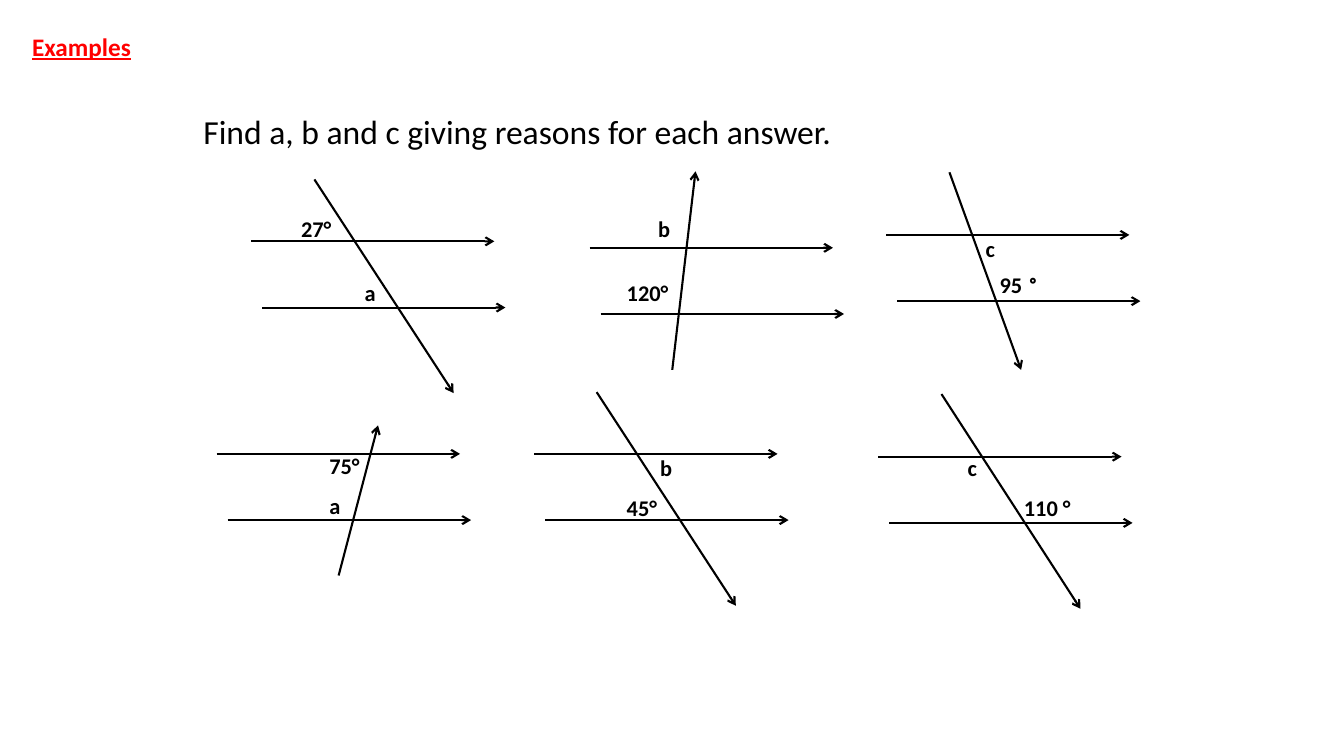
from lxml.etree import SubElement
from pptx import Presentation
from pptx.dml.color import RGBColor
from pptx.enum.shapes import MSO_CONNECTOR as Connector
from pptx.enum.text import MSO_AUTO_SIZE as AutoSize
from pptx.oxml.ns import qn
from pptx.util import Pt

COLORS = {"ink": "000000", "heading": "FF0000"}
PARALLEL_LENGTH = 173.8
PARALLEL_SHIFT = (7.9, 47.3)
LABEL_HEIGHT = 26.6

DIAGRAMS = [
    {"upper": (179.3, 172.4), "crossing": (224.6, 128.2, 324, 280.8),
     "labels": [("a", 253.4, 195.8, 22.3), ("27°", 208, 150.5, 36)]},
    {"upper": (421.2, 177), "crossing": (480.2, 264.2, 496.8, 122.4),
     "labels": [("120°", 440.6, 195.8, 43.9), ("b", 463, 150.5, 23)]},
    {"upper": (632.9, 167.8), "crossing": (678.2, 123.1, 729.4, 264.2),
     "labels": [("95| °", 707, 190.1, 47.5), ("c", 697, 164.2, 20.9)]},
    {"upper": (154.8, 324.2), "crossing": (241.9, 411.1, 270, 303.8),
     "labels": [("a", 228.2, 347.8, 22.3), ("75°", 228.2, 319.7, 36)]},
    {"upper": (381.6, 324.2), "crossing": (426.2, 280.1, 525.6, 432.7),
     "labels": [("45°", 440.6, 349.2, 36), ("b", 464.4, 321.1, 23)]},
    {"upper": (627.3, 326.2), "crossing": (672.5, 281.5, 771.8, 434.9),
     "labels": [("110 °", 724.3, 349.2, 47.5), ("c", 684, 321.1, 20.9)]},
]


def add_text(page, text, left, top, width, height, size=16, color="ink",
             bold=True, underline=False, wrap=False, fonts=("Calibri", "Comic Neue")):
    box = page.shapes.add_textbox(Pt(left), Pt(top), Pt(width), Pt(height))
    frame = box.text_frame
    frame.word_wrap = wrap
    frame.auto_size = AutoSize.SHAPE_TO_FIT_TEXT
    para = frame.paragraphs[0]
    for part, font_name in zip(text.split("|"), fonts):
        span = para.add_run()
        span.text = part
        span.font.name = font_name
        span.font.size = Pt(size)
        span.font.bold = bold
        span.font.underline = underline
        span.font.color.rgb = RGBColor.from_string(COLORS[color])


def add_arrow(page, x1, y1, x2, y2):
    arrow = page.shapes.add_connector(Connector.STRAIGHT, Pt(x1), Pt(y1), Pt(x2), Pt(y2))
    arrow.line.width = Pt(1.5)
    arrow.line.color.rgb = RGBColor.from_string(COLORS["ink"])
    SubElement(arrow.line._get_or_add_ln(), qn("a:tailEnd"), type="arrow")
    SubElement(arrow._element.spPr, qn("a:effectLst"))


def add_diagram(page, upper, crossing, labels):
    left, top = upper
    shift_x, shift_y = PARALLEL_SHIFT
    for x, y in [(left, top), (left + shift_x, top + shift_y)]:
        add_arrow(page, x, y, x + PARALLEL_LENGTH, y)
    add_arrow(page, *crossing)
    for text, x, y, width in labels:
        add_text(page, text, x, y, width, LABEL_HEIGHT)


def main():
    deck = Presentation()
    deck.slide_width, deck.slide_height = Pt(960), Pt(540)
    page = deck.slides.add_slide(deck.slide_layouts[6])
    add_text(page, "Examples", 15.8, 18.7, 113.8, 29, size=18,
             color="heading", underline=True, wrap=True)
    add_text(page, "Find a, b and c giving reasons for each answer.",
             138.2, 75.6, 463, 36.3, size=24, bold=False, wrap=True)
    for diagram in DIAGRAMS:
        add_diagram(page, **diagram)
    deck.save("out.pptx")


if __name__ == "__main__":
    main()
